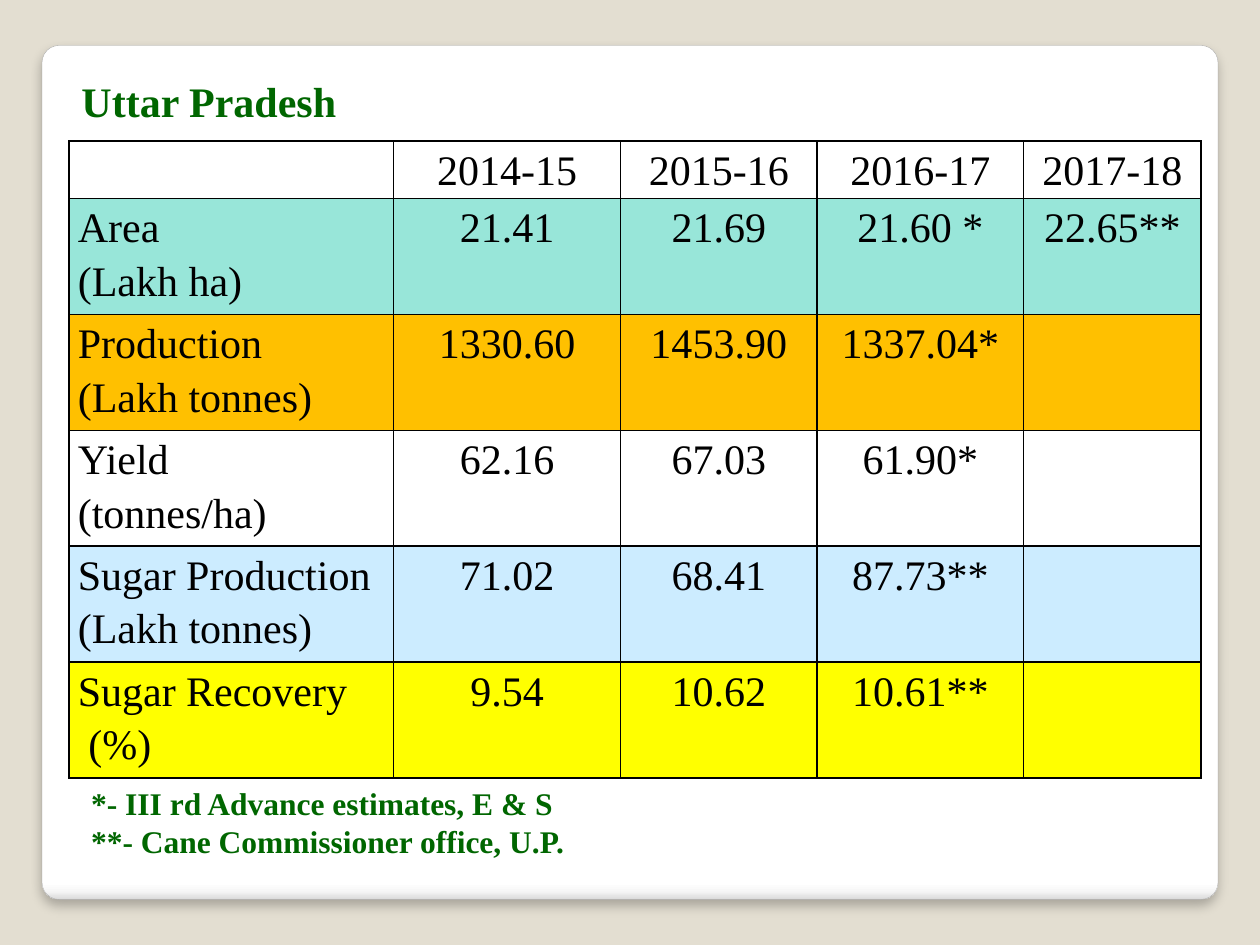
from lxml.etree import SubElement
from pptx import Presentation
from pptx.dml.color import RGBColor
from pptx.enum.shapes import MSO_SHAPE
from pptx.enum.text import MSO_AUTO_SIZE, PP_ALIGN
from pptx.oxml import parse_xml
from pptx.oxml.ns import nsdecls, qn
from pptx.util import Pt

BEIGE = RGBColor(0xE3, 0xDE, 0xD1)
GRAY = RGBColor(0xA4, 0xA4, 0xA4)
GREEN = RGBColor(0x00, 0x66, 0x00)
BLACK = RGBColor(0x00, 0x00, 0x00)
TEAL = RGBColor(0x98, 0xE6, 0xD9)
ORANGE = RGBColor(0xFF, 0xC0, 0x00)
LIGHT_BLUE = RGBColor(0xCC, 0xEC, 0xFF)
YELLOW = RGBColor(0xFF, 0xFF, 0x00)
FONT = "Times New Roman"

ROWS = [
    (None, ["", "2014-15", "2015-16", "2016-17", "2017-18"]),
    (TEAL, ["Area\n(Lakh ha)", "21.41", "21.69", "21.60 *", "22.65**"]),
    (ORANGE, ["Production\n(Lakh tonnes)", "1330.60", "1453.90", "1337.04*", ""]),
    (None, ["Yield\n(tonnes/ha)", "62.16", "67.03", "61.90*", ""]),
    (LIGHT_BLUE, ["Sugar Production (Lakh tonnes)", "71.02", "68.41", "87.73**", ""]),
    (YELLOW, ["Sugar Recovery\n (%)", "9.54", "10.62", "10.61**", ""]),
]
COLUMN_WIDTHS = [185.5, 129.5, 112.5, 118, 101.5]


def style_text(paragraph, size, color, bold):
    paragraph.font.name = FONT
    paragraph.font.size = Pt(size)
    paragraph.font.color.rgb = color
    paragraph.font.bold = bold


def add_border(cell, side):
    line = SubElement(cell._tc.get_or_add_tcPr(), qn(f"a:{side}"), w=str(Pt(1)))
    fill = SubElement(line, qn("a:solidFill"))
    SubElement(fill, qn("a:srgbClr"), val=str(BLACK))


deck = Presentation()
deck.slide_width, deck.slide_height = Pt(720), Pt(540)
page = deck.slides.add_slide(deck.slide_layouts[6])
page.background.fill.solid()
page.background.fill.fore_color.rgb = BEIGE

panel = page.shapes.add_shape(MSO_SHAPE.ROUNDED_RECTANGLE, Pt(24), Pt(26), Pt(672), Pt(488))
panel.adjustments[0] = 0.02
panel.line.color.rgb = GRAY
panel.line.width = Pt(0.16)
stops = "".join(
    f'<a:gs pos="{position * 1000}"><a:srgbClr val="{color}"/></a:gs>'
    for position, color in [(0, "FFFFFF"), (98, "FFFFFF"), (99, "F7F7F7"), (100, "DADADA")]
)
gradient = parse_xml(
    f'<a:gradFill {nsdecls("a")}><a:gsLst>{stops}</a:gsLst><a:lin ang="5400000" scaled="0"/></a:gradFill>'
)
panel.line._ln.addprevious(gradient)
shadow = parse_xml(
    f'<a:effectLst {nsdecls("a")}><a:outerShdw blurRad="{Pt(6)}" dist="{Pt(4)}" dir="5400000" '
    'algn="t" rotWithShape="0"><a:srgbClr val="000000"><a:alpha val="25000"/></a:srgbClr>'
    '</a:outerShdw></a:effectLst>'
)
panel.line._ln.addnext(shadow)

frame = page.shapes.add_table(
    len(ROWS), len(COLUMN_WIDTHS), Pt(39.5), Pt(80.5), Pt(sum(COLUMN_WIDTHS)), Pt(364)
)
table = frame.table
table.first_row = False
table.horz_banding = False
for column, width in zip(table.columns, COLUMN_WIDTHS):
    column.width = Pt(width)
for row_index, (color, values) in enumerate(ROWS):
    table.rows[row_index].height = Pt(66.2 if row_index else 33)
    for column_index, value in enumerate(values):
        cell = table.cell(row_index, column_index)
        cell.margin_left = cell.margin_right = Pt(5)
        cell.margin_top = cell.margin_bottom = 0
        cell.text = value
        for para in cell.text_frame.paragraphs:
            para.alignment = PP_ALIGN.CENTER if column_index else PP_ALIGN.LEFT
            para.line_spacing = 1.15
            style_text(para, 24, BLACK, False)
        for side in ("lnL", "lnR", "lnT", "lnB"):
            add_border(cell, side)
        if color is None:
            cell.fill.background()
        else:
            cell.fill.solid()
            cell.fill.fore_color.rgb = color

for left, top, width, height, size, text in [
    (39.5, 39.5, 161, 36, 24, "Uttar Pradesh"),
    (45, 444.5, 288, 51, 18, "*- III rd Advance estimates, E & S\n**- Cane Commissioner office, U.P."),
]:
    box = page.shapes.add_textbox(Pt(left), Pt(top), Pt(width), Pt(height))
    box.text_frame.word_wrap = False
    box.text_frame.auto_size = MSO_AUTO_SIZE.SHAPE_TO_FIT_TEXT
    box.text_frame.text = text
    for para in box.text_frame.paragraphs:
        style_text(para, size, GREEN, True)

deck.save("out.pptx")
